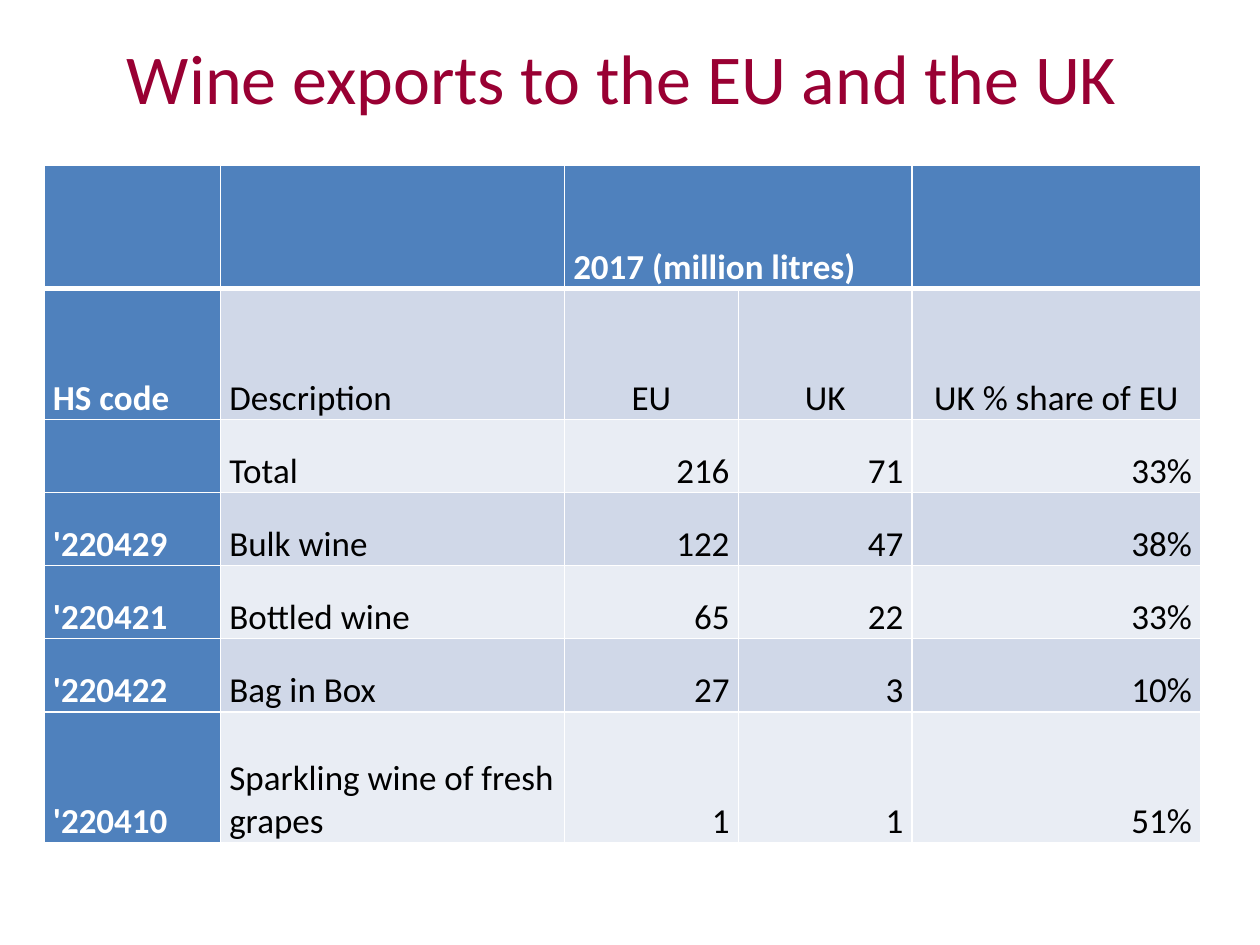
import pptx
import pptx.dml.color
import pptx.enum.text
import pptx.oxml
import pptx.oxml.ns
import pptx.util
from lxml import etree

RGBColor = pptx.dml.color.RGBColor
Inches = pptx.util.Inches
Pt = pptx.util.Pt
Align = pptx.enum.text.PP_ALIGN
Anchor = pptx.enum.text.MSO_ANCHOR

WHITE = RGBColor(0xFF, 0xFF, 0xFF)
BLACK = RGBColor(0, 0, 0)
WINE = RGBColor(0x99, 0x00, 0x33)
BLUE = RGBColor(0x4F, 0x81, 0xBD)
BANDS = (RGBColor(0xE9, 0xED, 0xF4), RGBColor(0xD0, 0xD8, 0xE8))

FONT = "Calibri"
LEFT, WIDTH = 0.35, 9.17
COLUMN_WIDTHS = (1.4, 2.73, 1.38, 1.38, 2.29)
ROW_HEIGHTS = (0.98, 1.04, 0.58, 0.58, 0.58, 0.58, 1.04)
ROWS = (
    ("", "", "2017 (million litres)", "", ""),
    ("HS code", "Description", "EU", "UK", "UK % share of EU"),
    ("", "Total", "216", "71", "33%"),
    ("'220429", "Bulk wine", "122", "47", "38%"),
    ("'220421", "Bottled wine", "65", "22", "33%"),
    ("'220422", "Bag in Box", "27", "3", "10%"),
    ("'220410", "Sparkling wine of fresh grapes", "1", "1", "51%"),
)


def format_title(title):
    title.left, title.top = Inches(LEFT), Inches(0.22)
    title.width, title.height = Inches(WIDTH), Inches(0.77)
    title.text_frame.text = "Wine exports to the EU and the UK"
    title.text_frame.vertical_anchor = Anchor.MIDDLE
    para = title.text_frame.paragraphs[0]
    para.alignment = Align.CENTER
    font = para.runs[0].font
    font.name, font.size, font.color.rgb = FONT, Pt(40), WINE


def set_borders(cell, row):
    """Draw white borders, with a heavy rule under the header row."""
    heavy_side = {0: "lnB", 1: "lnT"}.get(row)
    properties = cell._tc.get_or_add_tcPr()
    for index, side in enumerate(("lnL", "lnR", "lnT", "lnB")):
        points = 3 if side == heavy_side else 1
        line = etree.Element(pptx.oxml.ns.qn(f"a:{side}"), w=str(Pt(points)))
        fill = etree.SubElement(line, pptx.oxml.ns.qn("a:solidFill"))
        etree.SubElement(fill, pptx.oxml.ns.qn("a:srgbClr"), val=str(WHITE))
        properties.insert(index, line)


def cell_alignment(row, column):
    if row == 0 or column < 2:
        return Align.LEFT
    return Align.CENTER if row == 1 else Align.RIGHT


def format_cell(cell, row, column, text):
    heading = row == 0 or column == 0
    cell.fill.solid()
    cell.fill.fore_color.rgb = BLUE if heading else BANDS[row % 2]
    set_borders(cell, row)
    cell.vertical_anchor = Anchor.BOTTOM
    cell.margin_left = cell.margin_right = Inches(0.07)
    cell.margin_top = cell.margin_bottom = 0
    cell.text_frame.text = text
    para = cell.text_frame.paragraphs[0]
    para.alignment = cell_alignment(row, column)
    for span in para.runs:
        span.font.name, span.font.size = FONT, Pt(20)
        span.font.bold = heading
        span.font.color.rgb = WHITE if heading else BLACK


def add_export_table(page):
    table = page.shapes.add_table(
        len(ROW_HEIGHTS), len(COLUMN_WIDTHS), Inches(LEFT), Inches(1.31),
        Inches(WIDTH), Inches(sum(ROW_HEIGHTS))).table
    table.first_col = True
    for column, width in zip(table.columns, COLUMN_WIDTHS):
        column.width = Inches(width)
    for row, height in zip(table.rows, ROW_HEIGHTS):
        row.height = Inches(height)
    for row, texts in enumerate(ROWS):
        for column, text in enumerate(texts):
            format_cell(table.cell(row, column), row, column, text)
    table.cell(0, 2).merge(table.cell(0, 3))


def main():
    deck = pptx.Presentation()
    deck.slide_width, deck.slide_height = Inches(10), Inches(7.5)
    page = deck.slides.add_slide(deck.slide_layouts.get_by_name("Title Only"))
    format_title(page.shapes.title)
    add_export_table(page)
    deck.save("out.pptx")


if __name__ == "__main__":
    main()
